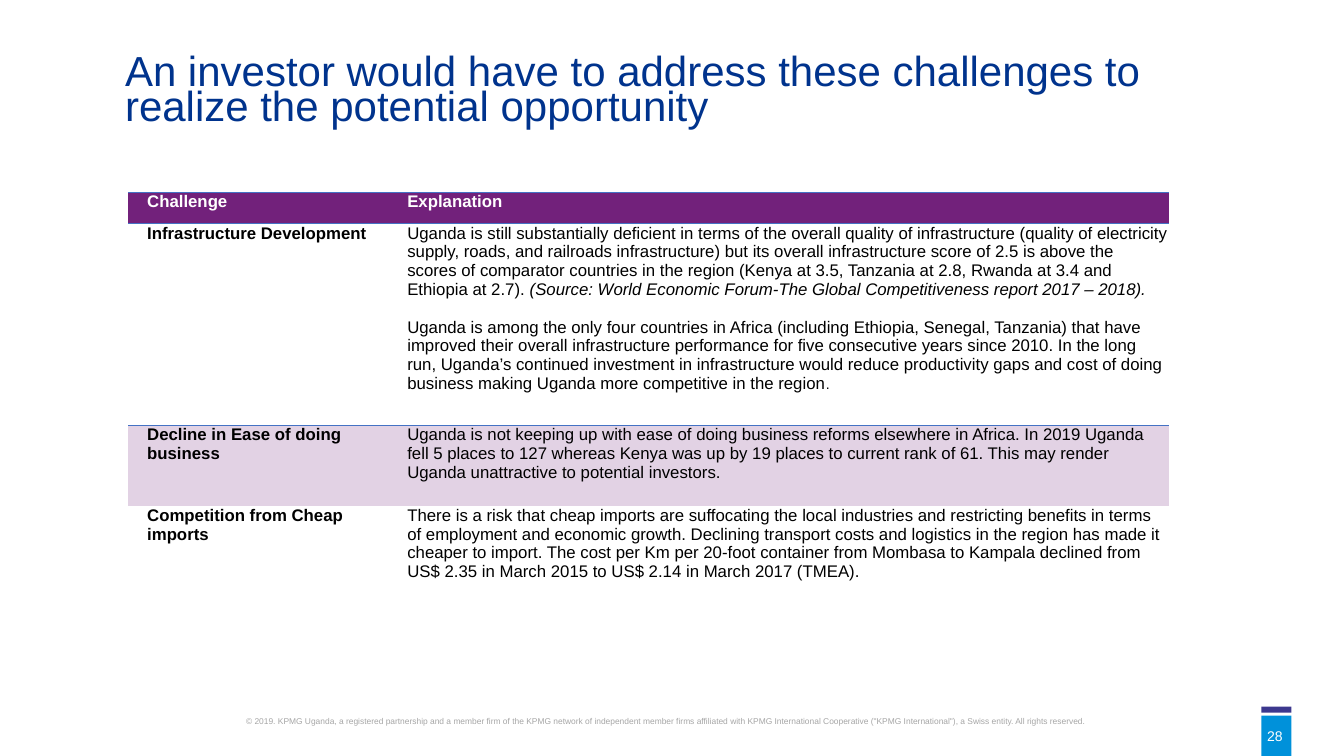
from dataclasses import dataclass

from lxml import etree
from pptx import Presentation
from pptx import util as u
from pptx.dml.color import RGBColor
from pptx.enum import shapes, text
from pptx.oxml import ns

COLORS = {
    "title": "00338D", "header": "72217B", "band": "E2D2E4", "rule": "4472C4",
    "white": "FFFFFF", "black": "000000", "footer": "A6A6A6",
    "badge": "0091DA", "badge_bar": "3C388E",
}
PLAIN_TABLE_STYLE = "{2D5ABB26-0587-4C30-8999-92F81FD0307C}"


@dataclass(frozen=True)
class Span:
    content: str
    size: float = 12
    color: str = "black"
    bold: bool = False
    italic: bool = False


@dataclass(frozen=True)
class Row:
    height: float
    label: list[Span]
    explanation: list[list[Span]]
    fill: str | None = "white"
    borders: tuple[str, ...] = ()


@dataclass(frozen=True)
class Block:
    left: float
    top: float
    width: float
    height: float
    color: str


@dataclass(frozen=True)
class Label:
    left: float
    top: float
    width: float
    height: float
    span: Span
    alignment: text.PP_ALIGN = text.PP_ALIGN.LEFT
    anchor: text.MSO_ANCHOR = text.MSO_ANCHOR.TOP


ROWS = [
    Row(0.31, [Span("Challenge", color="white", bold=True)],
        [[Span("Explanation", color="white", bold=True)]], "header", ("lnT", "lnB")),
    Row(2.0, [Span("Infrastructure Development", bold=True)], [
        [Span("Uganda is still substantially deﬁcient in terms of the overall quality of "
              "infrastructure (quality of electricity supply, roads, and railroads "
              "infrastructure) but its overall infrastructure score of 2.5 is above the "
              "scores of comparator countries in the region (Kenya at 3.5, Tanzania at 2.8, "
              "Rwanda at 3.4 and Ethiopia at 2.7). "),
         Span("(Source: World Economic Forum-The Global Competitiveness report "
              "2017 – 2018).", italic=True)],
        [Span("Uganda is among the only four countries in Africa (including Ethiopia, "
              "Senegal, Tanzania) that have improved their overall infrastructure "
              "performance for five consecutive years since 2010. In the long run, "
              "Uganda’s continued investment in infrastructure would reduce productivity "
              "gaps and cost of doing business making Uganda more competitive in the region"),
         Span(".", size=10)],
    ], None, ("lnT",)),
    Row(0.8, [Span("Decline in Ease of doing business", bold=True)], [
        [Span("Uganda is not keeping up with ease of doing business reforms elsewhere in "
              "Africa. In 2019 Uganda fell 5 places to 127 whereas Kenya was up by 19 places "
              "to current rank of 61. This may render Uganda unattractive to potential "
              "investors.")],
    ], "band"),
    Row(0.8, [Span("Competition from Cheap imports", bold=True)], [
        [Span("There is a risk that cheap imports are suffocating the local industries and "
              "restricting benefits in terms of employment and economic growth. Declining "
              "transport costs and logistics in the region has made it cheaper to import. "
              "The cost per Km per 20-foot container from Mombasa to Kampala declined from "
              "US$ 2.35 in March 2015 to US$ 2.14 in March 2017 (TMEA).")],
    ]),
    Row(0.53, [], [[]]),
]
COLUMN_WIDTHS = (2.58, 7.74)
BLOCKS = [
    Block(12.51, 7.1, 0.3, 0.4, "badge"),
    Block(12.51, 7.01, 0.3, 0.06, "badge_bar"),
]
LABELS = [
    Label(12.23, 7.22, 0.49, 0.16, Span("28", 10, "white"),
          text.PP_ALIGN.RIGHT, text.MSO_ANCHOR.BOTTOM),
    Label(2.44, 7.1, 8.48, 0.21, Span(
        "© 2019. KPMG Uganda, a registered partnership and a member firm of the KPMG network "
        "of independent member firms affiliated with KPMG International Cooperative "
        "(\"KPMG International\"), a Swiss entity. All rights reserved.", 6, "footer")),
]


def rgb(name: str) -> RGBColor:
    """Return the named colour."""
    return RGBColor.from_string(COLORS[name])


def add_spans(paragraph, spans: list[Span]) -> None:
    """Add each span to the paragraph as a run."""
    for span in spans:
        run = paragraph.add_run()
        run.text = span.content
        run.font.name = "Arial"
        run.font.size = u.Pt(span.size)
        run.font.bold = span.bold
        run.font.italic = span.italic
        run.font.color.rgb = rgb(span.color)


def add_title(slide) -> None:
    """Place and format the slide title."""
    title = slide.shapes.title
    title.left, title.top = u.Inches(1.14), u.Inches(0.53)
    title.width, title.height = u.Inches(10.71), u.Inches(1.08)
    frame = title.text_frame
    frame.word_wrap = True
    frame.auto_size = text.MSO_AUTO_SIZE.NONE
    frame.vertical_anchor = text.MSO_ANCHOR.TOP
    paragraph = frame.paragraphs[0]
    paragraph.alignment = text.PP_ALIGN.LEFT
    paragraph.line_spacing = 0.7
    paragraph.space_before = u.Pt(0)
    add_spans(paragraph, [Span("An investor would have to address these challenges to "
                               "realize the potential opportunity", 30, "title")])


def add_block(slide, block: Block) -> None:
    """Draw a plain filled rectangle."""
    shape = slide.shapes.add_shape(
        shapes.MSO_SHAPE.RECTANGLE, u.Inches(block.left), u.Inches(block.top),
        u.Inches(block.width), u.Inches(block.height))
    shape.shadow.inherit = False
    shape.fill.solid()
    shape.fill.fore_color.rgb = rgb(block.color)
    shape.line.fill.background()


def add_label(slide, label: Label) -> None:
    """Draw a text box without insets."""
    box = slide.shapes.add_textbox(u.Inches(label.left), u.Inches(label.top),
                                   u.Inches(label.width), u.Inches(label.height))
    frame = box.text_frame
    frame.word_wrap = True
    frame.vertical_anchor = label.anchor
    frame.margin_left = frame.margin_right = frame.margin_top = frame.margin_bottom = 0
    frame.paragraphs[0].alignment = label.alignment
    add_spans(frame.paragraphs[0], [label.span])


def fill_cell(cell, paragraphs: list[list[Span]], row: Row) -> None:
    """Write the paragraphs of a cell and set its fill and borders."""
    cell.margin_left = u.Inches(0.19)
    cell.margin_right = cell.margin_top = cell.margin_bottom = 0
    for index, spans in enumerate(paragraphs):
        frame = cell.text_frame
        paragraph = frame.add_paragraph() if index else frame.paragraphs[0]
        if index:
            paragraph.space_before = u.Pt(13.4)
        add_spans(paragraph, spans)
    if row.fill:
        cell.fill.solid()
        cell.fill.fore_color.rgb = rgb(row.fill)
    else:
        cell.fill.background()
    properties = cell._tc.get_or_add_tcPr()
    for index, side in enumerate(row.borders):
        line = etree.Element(ns.qn(f"a:{side}"), w=str(u.Pt(0.58)))
        solid = etree.SubElement(line, ns.qn("a:solidFill"))
        etree.SubElement(solid, ns.qn("a:srgbClr"), val=COLORS["rule"])
        properties.insert(index, line)


def add_challenges(slide) -> None:
    """Build the table of challenges."""
    frame = slide.shapes.add_table(
        len(ROWS), len(COLUMN_WIDTHS), u.Inches(1.27), u.Inches(1.91),
        u.Inches(sum(COLUMN_WIDTHS)), u.Inches(sum(row.height for row in ROWS)))
    table = frame.table
    table.horz_banding = False
    table._tbl.tblPr.find(ns.qn("a:tableStyleId")).text = PLAIN_TABLE_STYLE
    for column, width in zip(table.columns, COLUMN_WIDTHS):
        column.width = u.Inches(width)
    for index, row in enumerate(ROWS):
        table.rows[index].height = u.Inches(row.height)
        fill_cell(table.cell(index, 0), [row.label], row)
        fill_cell(table.cell(index, 1), row.explanation, row)


def main() -> None:
    """Build and save the slide."""
    presentation = Presentation()
    presentation.slide_width, presentation.slide_height = u.Inches(13.33), u.Inches(7.5)
    slide = presentation.slides.add_slide(presentation.slide_layouts.get_by_name("Title Only"))
    for block in BLOCKS:
        add_block(slide, block)
    for label in LABELS:
        add_label(slide, label)
    add_title(slide)
    add_challenges(slide)
    presentation.save("out.pptx")


if __name__ == "__main__":
    main()
